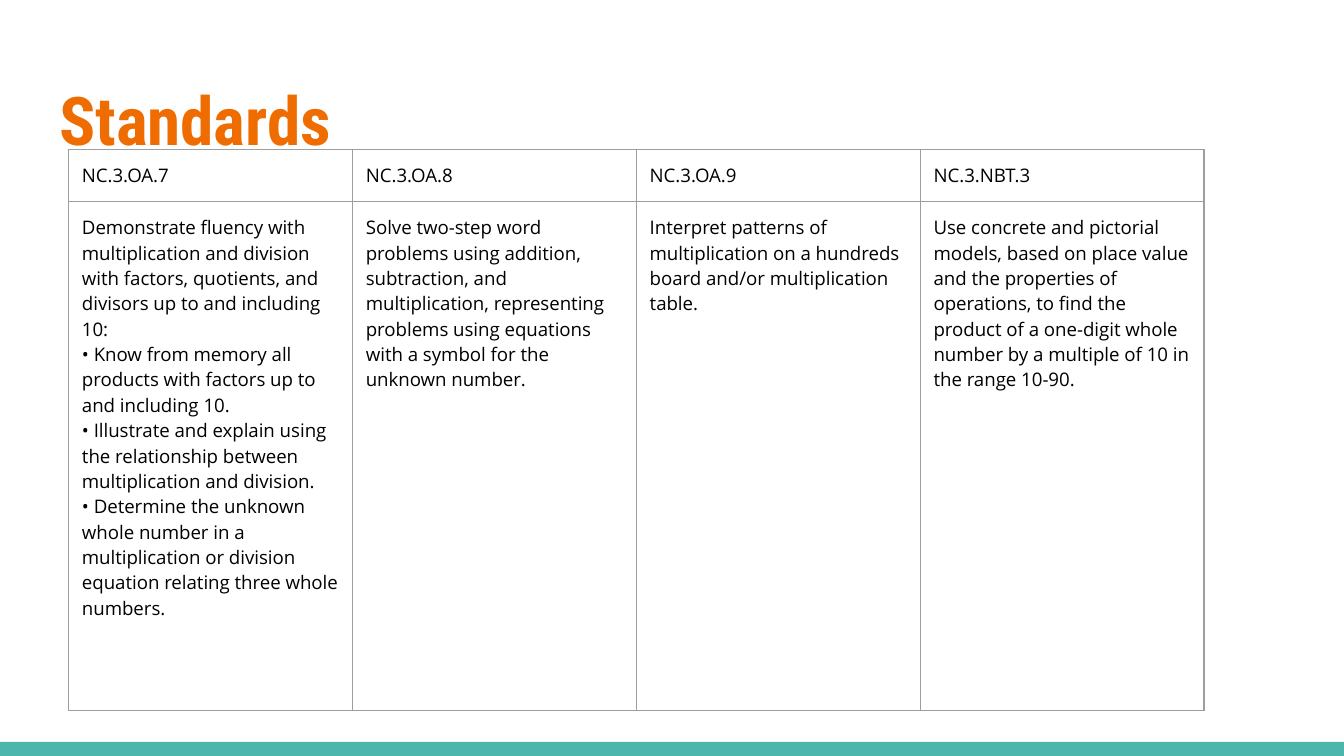
"""Build the Standards slide with its table of four curriculum standards."""
from dataclasses import dataclass

from lxml.etree import SubElement
from pptx import Presentation
from pptx.dml.color import RGBColor
from pptx.enum.shapes import MSO_SHAPE as Shape
from pptx.enum.text import MSO_ANCHOR as Anchor, PP_ALIGN as Align
from pptx.oxml.ns import qn
from pptx.util import Inches, Pt

COLORS = {"teal": "4DB6AC", "orange": "EF6C00", "black": "000000", "grid": "9E9E9E"}
INSET = Inches(0.1)
ROW_HEIGHTS = (0.39, 3.79)
TABLE_WIDTH = 8.45


@dataclass
class Standard:
    code: str
    lines: tuple[str, ...]


STANDARDS = (
    Standard("NC.3.OA.7", (
        "Demonstrate fluency with multiplication and division with factors, "
        "quotients, and divisors up to and including 10:",
        "• Know from memory all products with factors up to and including 10.",
        "• Illustrate and explain using the relationship between multiplication and division.",
        "• Determine the unknown whole number in a multiplication or division "
        "equation relating three whole numbers.",
    )),
    Standard("NC.3.OA.8", (
        "Solve two-step word problems using addition, subtraction, and multiplication, "
        "representing problems using equations with a symbol for the unknown number.",
    )),
    Standard("NC.3.OA.9", (
        "Interpret patterns of multiplication on a hundreds board and/or multiplication table.",
    )),
    Standard("NC.3.NBT.3", (
        "Use concrete and pictorial models, based on place value and the properties of "
        "operations, to find the product of a one-digit whole number by a multiple of 10 "
        "in the range 10-90.",
    )),
)


def write_text(frame, *lines: str, font: str = "Open Sans", size: float = 10,
               color: str = "black", bold: bool = False) -> None:
    """Fill a text frame with one formatted paragraph per line."""
    frame.word_wrap = True
    for index, line in enumerate(lines):
        para = frame.add_paragraph() if index else frame.paragraphs[0]
        para.alignment = Align.LEFT
        para.line_spacing = 1.0
        para.space_before = para.space_after = Pt(0)
        span = para.add_run()
        span.text = line
        span.font.name = font
        span.font.size = Pt(size)
        span.font.bold = bold
        span.font.color.rgb = RGBColor.from_string(COLORS[color])


def set_insets(target) -> None:
    """Give a cell or text frame equal margins on all sides."""
    target.margin_left = target.margin_right = INSET
    target.margin_top = target.margin_bottom = INSET


def draw_borders(cell) -> None:
    """Outline a cell with thin grid lines, ahead of its fill."""
    cell.fill.background()
    properties = cell._tc.get_or_add_tcPr()
    for index, side in enumerate(("lnL", "lnR", "lnT", "lnB")):
        line = SubElement(properties, qn(f"a:{side}"), w=str(Pt(0.75)))
        fill = SubElement(line, qn("a:solidFill"))
        SubElement(fill, qn("a:srgbClr"), val=COLORS["grid"])
        properties.insert(index, line)


def draw_cell(cell, *lines: str) -> None:
    """Write and outline one table cell."""
    set_insets(cell)
    cell.vertical_anchor = Anchor.TOP
    write_text(cell.text_frame, *lines)
    draw_borders(cell)


def draw_table(page, standards: tuple[Standard, ...]) -> None:
    """Draw one column per standard: its code above its description."""
    frame = page.shapes.add_table(
        len(ROW_HEIGHTS), len(standards), Inches(0.51), Inches(1.11),
        Inches(TABLE_WIDTH), Inches(sum(ROW_HEIGHTS)))
    table = frame.table
    table.first_row = table.horz_banding = False
    for row, height in zip(table.rows, ROW_HEIGHTS):
        row.height = Inches(height)
    for index, standard in enumerate(standards):
        table.columns[index].width = Inches(TABLE_WIDTH / len(standards))
        draw_cell(table.cell(0, index), standard.code)
        draw_cell(table.cell(1, index), *standard.lines)


def draw_footer(page) -> None:
    """Draw the coloured band along the bottom edge."""
    band = page.shapes.add_shape(
        Shape.RECTANGLE, 0, Inches(5.52), Inches(10), Inches(0.11))
    band.shadow.inherit = False
    band.fill.solid()
    band.fill.fore_color.rgb = RGBColor.from_string(COLORS["teal"])
    band.line.fill.background()


def draw_title(page, text: str) -> None:
    """Place and format the title placeholder."""
    title = page.shapes.title
    title.left, title.top = Inches(0.34), Inches(0.5)
    title.width, title.height = Inches(9.32), Inches(0.77)
    frame = title.text_frame
    set_insets(frame)
    frame.vertical_anchor = Anchor.MIDDLE
    write_text(frame, text, font="Roboto Condensed", size=36, color="orange", bold=True)


def main() -> None:
    """Build and save the deck."""
    deck = Presentation()
    deck.slide_width = Inches(10)
    deck.slide_height = deck.slide_width * 9 // 16
    page = deck.slides.add_slide(deck.slide_layouts[5])
    draw_footer(page)
    draw_title(page, "Standards")
    draw_table(page, STANDARDS)
    deck.save("out.pptx")


if __name__ == "__main__":
    main()
